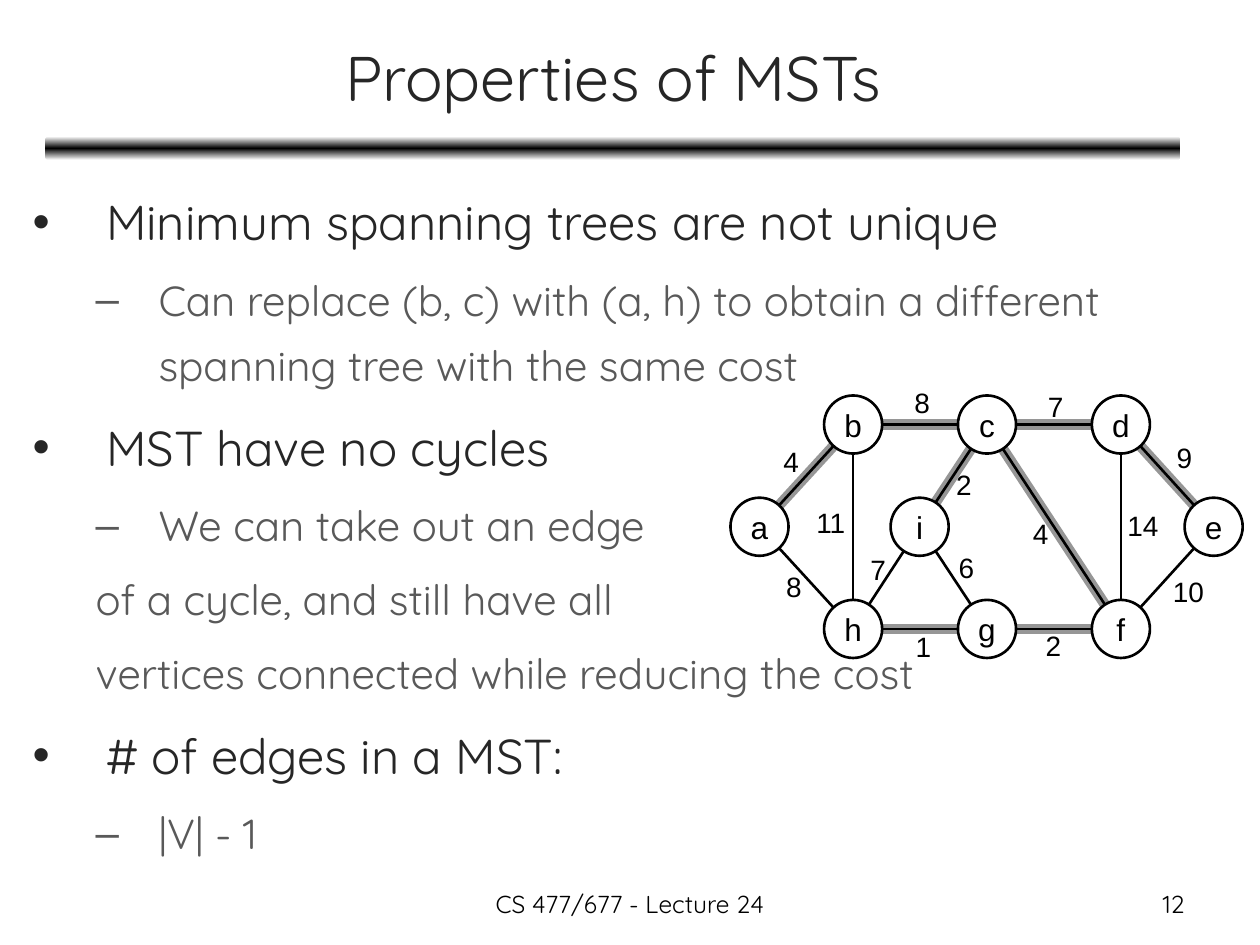
from copy import deepcopy
from math import hypot

from lxml.etree import SubElement
from pptx import Presentation
from pptx.dml.color import RGBColor
from pptx.enum.shapes import MSO_CONNECTOR as Connector, MSO_SHAPE as Preset
from pptx.enum.text import MSO_ANCHOR as Anchor, MSO_AUTO_SIZE as AutoSize, PP_ALIGN as Align
from pptx.oxml.ns import qn
from pptx.util import Pt

BLACK = RGBColor(0x00, 0x00, 0x00)
WHITE = RGBColor(0xFF, 0xFF, 0xFF)
DARK = RGBColor(0x26, 0x26, 0x26)
GRAY = RGBColor(0x59, 0x59, 0x59)
TREE_GRAY = RGBColor(0x96, 0x96, 0x96)

TOP, MIDDLE, BOTTOM = 242.6, 301, 359.4
NODES = {
    "a": (434, MIDDLE), "b": (487.5, TOP), "c": (564, TOP),
    "d": (640.5, TOP), "e": (693.5, MIDDLE), "h": (487.5, BOTTOM),
    "g": (564, BOTTOM), "f": (640.5, BOTTOM), "i": (525.5, MIDDLE),
}
RADIUS = 16.6

EDGES = [
    ("ab", "4", 440.6, 250.6, True),
    ("bc", "8", 515.5, 216.7, True),
    ("cd", "7", 591.8, 218.9, True),
    ("hg", "1", 516.2, 356.4, True),
    ("gf", "2", 590.4, 355.7, True),
    ("ci", "2", 539.3, 263.5, True),
    ("cf", "4", 583.2, 291.6, True),
    ("de", "9", 665.3, 248.4, True),
    ("ah", "8", 442.1, 321.8, False),
    ("bh", "11", 459.4, 285.1, False),
    ("ih", "7", 490.3, 312.5, False),
    ("df", "14", 637.2, 287.3, False),
    ("ef", "10", 663.1, 324.7, False),
    ("ig", "6", 540.7, 311, False),
]

BODY = [
    (0, "•", "Minimum spanning trees are not unique"),
    (1, "–", "Can replace (b, c) with (a, h) to obtain a different "
             "spanning tree with the same cost"),
    (0, "•", "MST have no cycles"),
    (1, "–", "We can take out an edge"),
    (1, None, "of a cycle, and still have all"),
    (1, None, "vertices connected while reducing the cost"),
    (0, "•", "# of edges in a MST:"),
    (1, "–", "|V| - 1"),
]
LEVELS = [(28, DARK, 42, -42), (24, GRAY, 72, -36)]


def trimmed_edge(pair):
    (x1, y1), (x2, y2) = NODES[pair[0]], NODES[pair[1]]
    share = RADIUS / hypot(x2 - x1, y2 - y1)
    dx, dy = (x2 - x1) * share, (y2 - y1) * share
    return x1 + dx, y1 + dy, x2 - dx, y2 - dy


class SlideBuilder:
    text_font = "Quicksand"
    graph_font = "Arial"
    outline = 1.5

    def __init__(self, slide):
        self.slide = slide

    def add_run(self, paragraph, text, size, color, font):
        run = paragraph.add_run()
        run.text = text
        run.font.size = Pt(size)
        run.font.name = font
        run.font.color.rgb = color

    def text_box(self, left, top, width, height):
        box = self.slide.shapes.add_textbox(Pt(left), Pt(top), Pt(width), Pt(height))
        box.text_frame.word_wrap = True
        return box.text_frame

    def line_of_text(self, text, left, top, width, height, size, color, align):
        frame = self.text_box(left, top, width, height)
        frame.vertical_anchor = Anchor.MIDDLE
        frame.paragraphs[0].alignment = align
        self.add_run(frame.paragraphs[0], text, size, color, self.text_font)

    def bullets(self, items, left, top, width, height):
        frame = self.text_box(left, top, width, height)
        for index, (level, bullet, text) in enumerate(items):
            size, color, margin, indent = LEVELS[level]
            paragraph = frame.add_paragraph() if index else frame.paragraphs[0]
            paragraph.level = level
            paragraph.line_spacing = 1.3
            paragraph.space_before = Pt(size * 0.2)
            properties = paragraph._p.get_or_add_pPr()
            properties.set("marL", str(Pt(margin)))
            properties.set("indent", str(Pt(indent)))
            if bullet:
                SubElement(properties, qn("a:buFont")).set("typeface", self.graph_font)
                SubElement(properties, qn("a:buChar")).set("char", bullet)
            else:
                SubElement(properties, qn("a:buNone"))
            self.add_run(paragraph, text, size, color, self.text_font)

    def rule(self, left, top, width, height):
        shape = self.slide.shapes.add_shape(
            Preset.ROUNDED_RECTANGLE, Pt(left), Pt(top), Pt(width), Pt(height))
        shape.shadow.inherit = False
        shape.line.fill.background()
        shape.fill.gradient()
        shape.fill.gradient_angle = 90
        stop_list = shape._element.spPr.find(".//" + qn("a:gsLst"))
        stop_list.append(deepcopy(stop_list[0]))
        stops = shape.fill.gradient_stops
        for stop, position, color in zip(stops, (0, 0.5, 1), (WHITE, BLACK, WHITE)):
            stop.position = position
            stop.color.rgb = color

    def node(self, name, x, y):
        shape = self.slide.shapes.add_shape(
            Preset.OVAL, Pt(x - RADIUS), Pt(y - RADIUS), Pt(2 * RADIUS), Pt(2 * RADIUS))
        shape.shadow.inherit = False
        shape.fill.background()
        shape.line.color.rgb = BLACK
        shape.line.width = Pt(self.outline)
        frame = shape.text_frame
        frame.word_wrap = False
        frame.vertical_anchor = Anchor.MIDDLE
        frame.paragraphs[0].alignment = Align.CENTER
        self.add_run(frame.paragraphs[0], name, 18, BLACK, self.graph_font)

    def edge(self, pair, color, width):
        ends = [Pt(value) for value in trimmed_edge(pair)]
        connector = self.slide.shapes.add_connector(Connector.STRAIGHT, *ends)
        connector.line.color.rgb = color
        connector.line.width = Pt(width)
        SubElement(connector._element.spPr, qn("a:effectLst"))

    def weight(self, text, left, top):
        frame = self.text_box(left, top, 14.4 + 8.9 * len(text), 26.6)
        frame.word_wrap = False
        frame.auto_size = AutoSize.SHAPE_TO_FIT_TEXT
        self.add_run(frame.paragraphs[0], text, 16, BLACK, self.graph_font)


def main():
    presentation = Presentation()
    presentation.slide_width, presentation.slide_height = Pt(720), Pt(540)
    builder = SlideBuilder(presentation.slides.add_slide(presentation.slide_layouts[6]))

    builder.rule(26, 78, 648.5, 13.5)
    builder.line_of_text("CS 477/677 - Lecture 24", 246, 504, 228, 25, 14, BLACK, Align.CENTER)
    builder.line_of_text("Properties of MSTs", 26.5, 8, 648, 71, 36, DARK, Align.CENTER)
    builder.bullets(BODY, 11.5, 96, 644.5, 429)

    for pair, _, _, _, in_tree in EDGES:
        if in_tree:
            builder.edge(pair, TREE_GRAY, 6)
    for name, (x, y) in NODES.items():
        builder.node(name, x, y)
    for pair, *_ in EDGES:
        builder.edge(pair, BLACK, builder.outline)
    for _, text, left, top, _ in EDGES:
        builder.weight(text, left, top)

    builder.line_of_text("12", 516, 504, 168, 25, 14, BLACK, Align.RIGHT)
    presentation.save("out.pptx")


if __name__ == "__main__":
    main()
